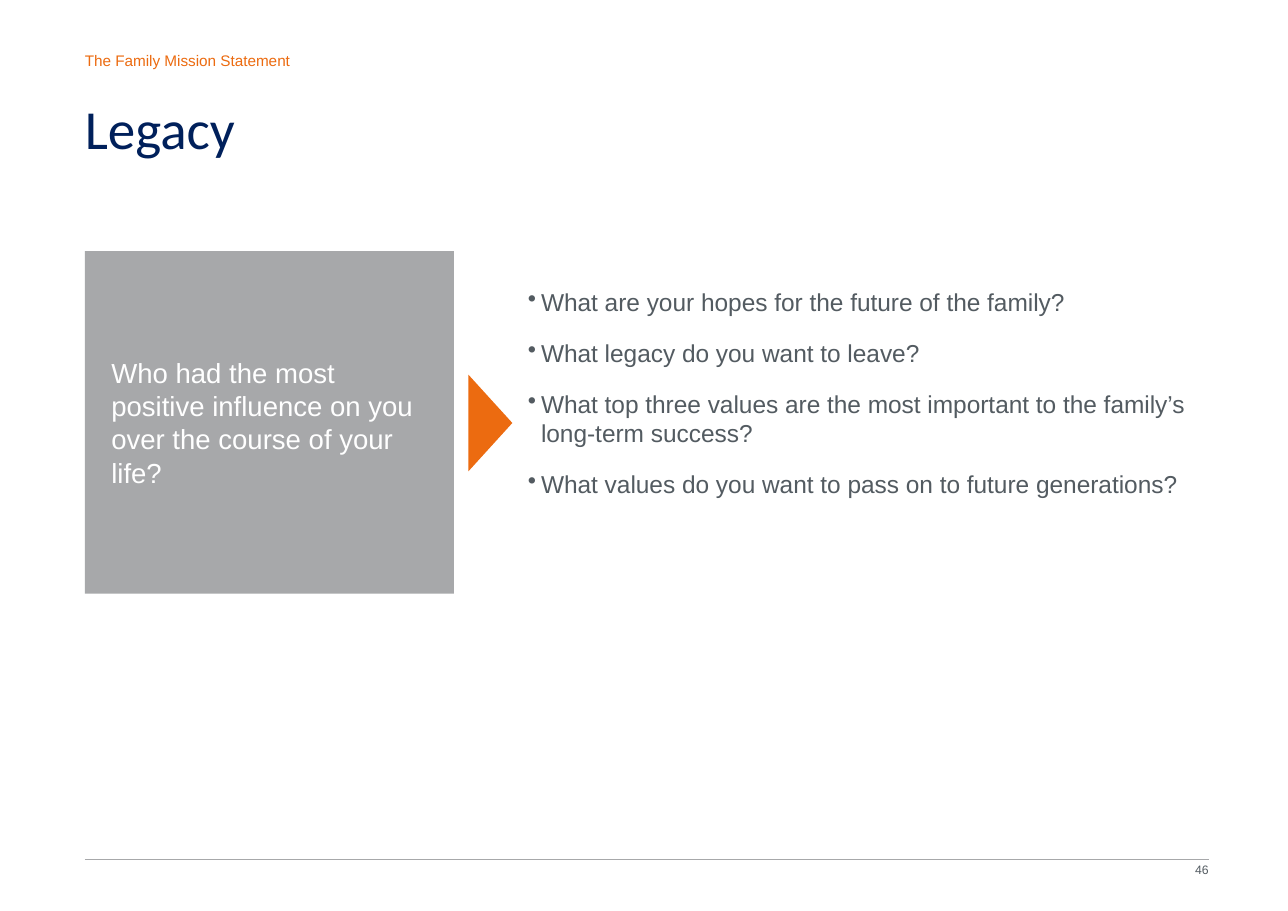
"""Build the Legacy slide of the family mission statement deck."""
from lxml import etree
from pptx import Presentation
from pptx.dml.color import RGBColor
from pptx.enum.shapes import MSO_CONNECTOR, MSO_SHAPE
from pptx.enum.text import MSO_ANCHOR, PP_ALIGN
from pptx.oxml.ns import qn
from pptx.util import Pt

STRAIGHT = MSO_CONNECTOR.STRAIGHT
RECTANGLE, TRIANGLE = MSO_SHAPE.RECTANGLE, MSO_SHAPE.ISOSCELES_TRIANGLE
TOP, MIDDLE = MSO_ANCHOR.TOP, MSO_ANCHOR.MIDDLE
LEFT, RIGHT = PP_ALIGN.LEFT, PP_ALIGN.RIGHT
PX = 9144
MARGIN, PANEL_WIDTH = 77, 335
COLORS = {"orange": "EC6B10", "navy": "00205B", "slate": "535B61", "gray": "A7A8AA", "white": "FFFFFF"}
QUESTIONS = [
    "What are your hopes for the future of the family?",
    "What legacy do you want to leave?",
    "What top three values are the most important to the family’s long-term success?",
    "What values do you want to pass on to future generations?",
]


class SlideBuilder:
    """Hold the style and the current slide."""

    def __init__(self, presentation):
        self.slide = presentation.slides.add_slide(presentation.slide_layouts[6])

    def color(self, name):
        return RGBColor.from_string(COLORS[name])

    def bullet(self, paragraph, indent):
        properties = paragraph._p.get_or_add_pPr()
        properties.set("marL", str(indent * PX))
        properties.set("indent", str(-indent * PX))
        etree.SubElement(properties, qn("a:buChar")).set("char", "•")

    def fill_text(self, shape, lines, size, color, font="Arial", insets=(0, 0), anchor=TOP, indent=0, gap=0, **formats):
        frame = shape.text_frame
        horizontal, vertical = (inset * PX for inset in insets)
        frame_formats = {
            "margin_left": horizontal, "margin_right": horizontal,
            "margin_top": vertical, "margin_bottom": vertical,
            "word_wrap": True, "vertical_anchor": anchor,
        }
        for name, value in frame_formats.items():
            setattr(frame, name, value)
        for index, line in enumerate(lines):
            paragraph = frame.paragraphs[0] if index == 0 else frame.add_paragraph()
            if indent:
                self.bullet(paragraph, indent)
            if index and gap:
                paragraph.space_before = Pt(gap)
            for name, value in {"alignment": LEFT, **formats}.items():
                setattr(paragraph, name, value)
            run = paragraph.add_run()
            run.text = line
            for name, value in {"name": font, "size": Pt(size)}.items():
                setattr(run.font, name, value)
            run.font.color.rgb = self.color(color)

    def text(self, box, lines, size, color, **formats):
        shape = self.slide.shapes.add_textbox(*(length * PX for length in box))
        self.fill_text(shape, lines, size, color, **formats)

    def shape(self, kind, box, fill, rotation=0):
        shape = self.slide.shapes.add_shape(kind, *(length * PX for length in box))
        shape.shadow.inherit = False
        shape.fill.solid()
        shape.fill.fore_color.rgb = self.color(fill)
        shape.line.fill.background()
        shape.rotation = rotation
        return shape

    def line(self, start, end, color, width):
        connector = self.slide.shapes.add_connector(STRAIGHT, *(length * PX for length in start + end))
        connector.line.color.rgb = self.color(color)
        connector.line.width = Pt(width)
        etree.SubElement(connector._element.spPr, qn("a:effectLst"))


def main():
    presentation = Presentation()
    presentation.slide_width, presentation.slide_height = 1169 * PX, 827 * PX
    builder = SlideBuilder(presentation)
    builder.text((938, 783, 159, 13), ["46"], 8, "slate", alignment=RIGHT)
    builder.line((MARGIN, 780), (1097, 780), "gray", 0.35)
    builder.text((MARGIN, 48, PANEL_WIDTH, 19), ["The Family Mission Statement"], 10, "orange", line_spacing=0.9)
    builder.text((MARGIN, 90, 933, 52), ["Legacy"], 36, "navy", font="Calibri", line_spacing=Pt(40))
    builder.text((479, 261, 642, 246), QUESTIONS, 16, "slate", indent=12, gap=14)
    panel = builder.shape(RECTANGLE, (MARGIN, 228, PANEL_WIDTH, 311), "gray")
    builder.fill_text(panel, ["Who had the most positive influence on you over the course of your life?"],
                      18, "white", insets=(24, 12), anchor=MIDDLE)
    builder.shape(TRIANGLE, (401, 364, 88, 40), "orange", rotation=90)
    presentation.save("out.pptx")


if __name__ == "__main__":
    main()
